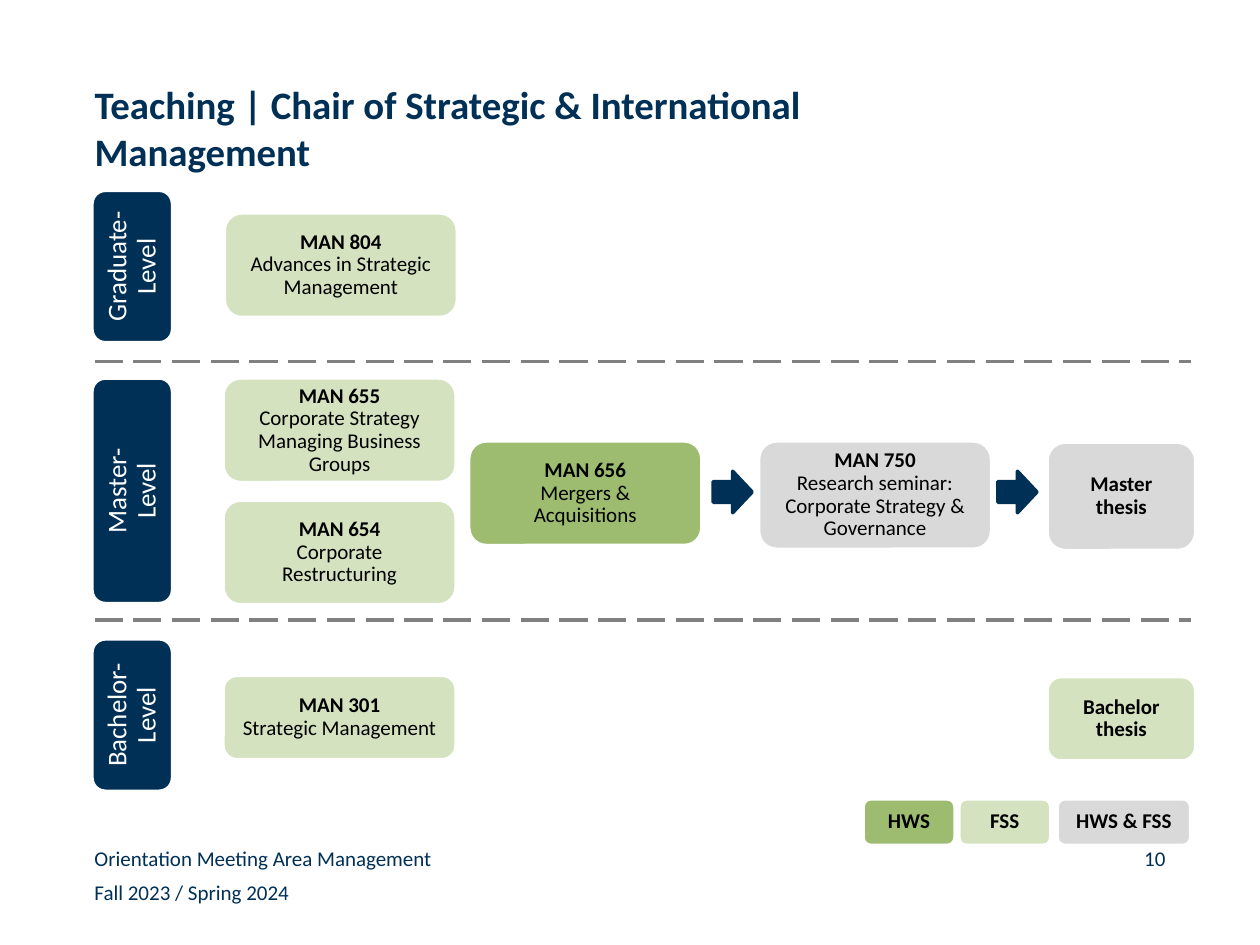
from lxml.etree import SubElement
from pptx import Presentation
from pptx.dml.color import RGBColor
from pptx.enum.dml import MSO_LINE
from pptx.enum.shapes import MSO_CONNECTOR, MSO_SHAPE
from pptx.enum.text import MSO_ANCHOR, MSO_AUTO_SIZE, PP_ALIGN
from pptx.oxml.ns import qn
from pptx.util import Inches, Pt

NAVY, GREEN, PALE, GRAY = "003056", "9DBC6F", "D4E2C0", "D9D9D9"
WHITE, BLACK, DASH = "FFFFFF", "000000", "808080"


def tint(code):
    return RGBColor.from_string(code)


class Deck:
    """Holds the style and the current slide."""

    face = "Calibri"

    def __init__(self):
        self.file = Presentation()
        self.file.slide_width = Inches(10)
        self.file.slide_height = Inches(7.5)
        self.slide = self.file.slides.add_slide(self.file.slide_layouts[5])

    def fit(self, frame, text, size, color, bold=0, align=PP_ALIGN.LEFT,
            pad=0, anchor=MSO_ANCHOR.TOP, pitch=1.0):
        frame.text = text
        frame.word_wrap = True
        frame.auto_size = MSO_AUTO_SIZE.NONE
        frame.vertical_anchor = anchor
        frame.margin_left = frame.margin_right = Inches(pad)
        frame.margin_top = frame.margin_bottom = Inches(pad)
        para = frame.paragraphs[0]
        para.alignment = align
        para.line_spacing = pitch
        for rank, run in enumerate(para.runs):
            run.font.name = self.face
            run.font.size = Pt(size)
            run.font.bold = rank < bold
            run.font.color.rgb = tint(color)
        for gap in para._p.findall(qn("a:br")):
            SubElement(gap, qn("a:rPr"), sz=str(round(size * 100)))

    def title(self, text, x, y, w, h):
        head = self.slide.shapes.title
        head.left, head.top = Inches(x), Inches(y)
        head.width, head.height = Inches(w), Inches(h)
        self.fit(head.text_frame, text, 22.2, NAVY, bold=2)

    def label(self, text, x, y, w, align=PP_ALIGN.LEFT):
        box = self.slide.shapes.add_textbox(
            Inches(x), Inches(y), Inches(w), Inches(0.2))
        self.fit(box.text_frame, text, 12, NAVY, align=align)

    def shape(self, kind, x, y, w, h, fill, edge):
        item = self.slide.shapes.add_shape(
            kind, Inches(x), Inches(y), Inches(w), Inches(h))
        item.shadow.inherit = False
        item.fill.solid()
        item.fill.fore_color.rgb = tint(fill)
        item.line.color.rgb = tint(edge)
        item.line.width = Pt(2)
        return item

    def card(self, text, x, y, w, h, fill, size=12, color=BLACK, bold=1):
        item = self.shape(MSO_SHAPE.ROUNDED_RECTANGLE, x, y, w, h, fill, WHITE)
        self.fit(item.text_frame, text, size, color, bold, PP_ALIGN.CENTER,
                 0.12, MSO_ANCHOR.MIDDLE, 0.9)
        return item

    def level(self, text, y, span):
        wide, mid = 0.64, 1.05
        item = self.card(text, mid - span / 2, y + (span - wide) / 2,
                         span, wide, NAVY, 15.4, WHITE, 0)
        item.rotation = 270

    def arrow(self, x, y):
        self.shape(MSO_SHAPE.RIGHT_ARROW, x, y, 0.31, 0.33, NAVY, NAVY)

    def rule(self, y):
        line = self.slide.shapes.add_connector(
            MSO_CONNECTOR.STRAIGHT, Inches(0.75), Inches(y),
            Inches(9.45), Inches(y))
        line.line.color.rgb = tint(DASH)
        line.line.width = Pt(2)
        line.line.dash_style = MSO_LINE.LONG_DASH
        SubElement(line._element.spPr, qn("a:effectLst"))


def main():
    deck = Deck()
    deck.title("Teaching | Chair of Strategic & International\vManagement",
               0.75, 0.64, 5.99, 1.25)

    for y in (2.87, 4.92):
        deck.rule(y)

    for text, y, span in (("Graduate-\vLevel", 1.51, 1.21),
                          ("Master-\vLevel", 3, 1.79),
                          ("Bachelor-\vLevel", 5.07, 1.21)):
        deck.level(text, y, span)

    for code, name, x, y, h, fill in (
            ("MAN 804", "Advances in Strategic Management",
             1.78, 1.69, 0.83, PALE),
            ("MAN 655", "Corporate Strategy\vManaging Business Groups",
             1.77, 3, 0.83, PALE),
            ("MAN 654", "Corporate Restructuring", 1.77, 3.97, 0.83, PALE),
            ("MAN 656", "Mergers & Acquisitions", 3.72, 3.5, 0.83, GREEN),
            ("MAN 750", "Research seminar: Corporate Strategy & Governance",
             6.02, 3.5, 0.86, GRAY),
            ("MAN 301", "Strategic Management", 1.77, 5.36, 0.67, PALE)):
        deck.card(f"{code}\v{name}", x, y, 1.85, h, fill)

    deck.card("Master thesis", 8.31, 3.51, 1.18, 0.86, GRAY)
    deck.card("Bachelor thesis", 8.31, 5.37, 1.18, 0.67, PALE)

    for x in (5.66, 7.92):
        deck.arrow(x, 3.74)

    for text, x, w, fill in (("HWS", 6.85, 0.73, GREEN),
                             ("FSS", 7.61, 0.73, PALE),
                             ("HWS & FSS", 8.39, 1.06, GRAY)):
        deck.card(text, x, 6.34, w, 0.37, fill)

    deck.label("Orientation Meeting Area Management", 0.75, 6.71, 3.17)
    deck.label("Fall 2023 / Spring 2024", 0.75, 6.98, 2.33)
    deck.label("10", 8.1, 6.71, 1.15, PP_ALIGN.RIGHT)
    deck.file.save("out.pptx")


if __name__ == "__main__":
    main()
